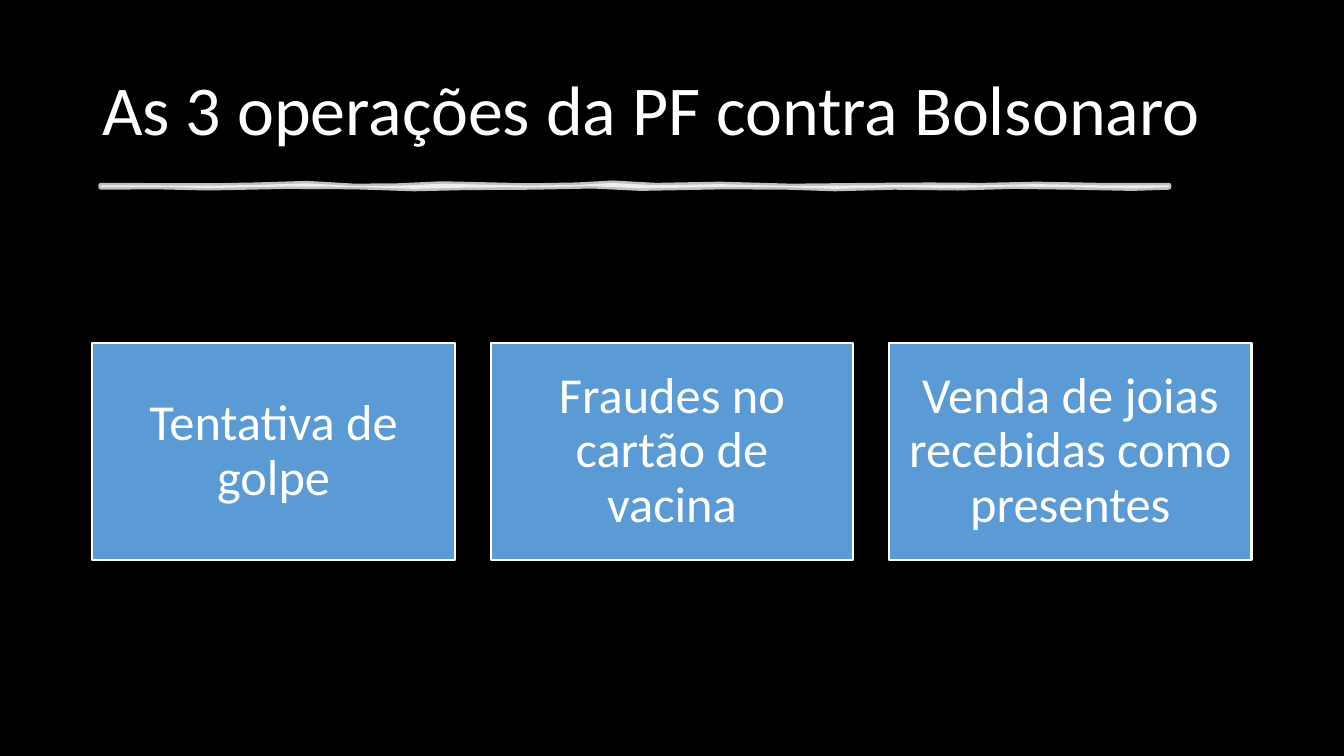
from dataclasses import dataclass

from lxml import etree
from pptx import Presentation
from pptx.dml.color import RGBColor
from pptx.enum.shapes import MSO_SHAPE
from pptx.enum.text import MSO_ANCHOR, PP_ALIGN
from pptx.oxml.ns import qn
from pptx.util import Cm, Pt

RECTANGLE = MSO_SHAPE.RECTANGLE
MIDDLE = MSO_ANCHOR.MIDDLE
LEFT, CENTER = PP_ALIGN.LEFT, PP_ALIGN.CENTER


@dataclass(frozen=True)
class Theme:
    """Colours, font and type sizes of the slide."""
    backdrop: RGBColor = RGBColor(0x00, 0x00, 0x00)
    light: RGBColor = RGBColor(0xFF, 0xFF, 0xFF)
    card: RGBColor = RGBColor(0x5B, 0x9B, 0xD5)
    font: str = "Calibri"
    title_size: int = 50
    card_size: int = 36
    card_border: float = 1.5
    brush_width: float = 3.5
    brush_opacity: int = 75


THEME = Theme()
SLIDE_WIDTH, SLIDE_HEIGHT = 33.87, 19.05
TITLE = "As 3 operações da PF contra Bolsonaro"
OPERATIONS = (
    "Tentativa de golpe",
    "Fraudes no cartão de vacina",
    "Venda de joias recebidas como presentes",
)
BRUSH_TOP = (
    (0, 0), (2.8, 0.01), (3.9, -0.01), (5.2, -0.05), (6.4, 0.02), (7.5, 0.01),
    (8.6, -0.04), (10.8, 0.01), (12, -0.01), (12.9, -0.06), (14, 0),
    (15.6, -0.03), (17.4, 0.02), (19.4, 0), (20.9, -0.01), (22.2, 0),
    (23.6, -0.03), (25.2, 0), (26.92, 0),
)
BRUSH_BOTTOM = (
    (26.92, 0.05), (26, 0.08), (24.5, 0.05), (23, 0.03), (21.6, 0.07),
    (20, 0.05), (18.5, 0.09), (17.3, 0.05), (15.7, 0.04), (13.6, 0.08),
    (12.4, 0.02), (10.9, 0.05), (9.2, 0.06), (7.9, 0.09), (6.4, 0.04),
    (4.7, 0.03), (2.7, 0.07), (1.4, 0.04), (0, 0.05),
)


def apply_format(target, values):
    """Set every named value on the target."""
    for name, value in values.items():
        setattr(target, name, value)


def write_text(shape, text, size, align, inset_x, inset_y):
    """Write one paragraph, vertically centred, into the shape."""
    frame = shape.text_frame
    apply_format(frame, {
        "word_wrap": True, "vertical_anchor": MIDDLE,
        "margin_left": Cm(inset_x), "margin_right": Cm(inset_x),
        "margin_top": Cm(inset_y), "margin_bottom": Cm(inset_y),
    })
    paragraph = frame.paragraphs[0]
    paragraph.text = text
    apply_format(paragraph, {"alignment": align, "line_spacing": 0.9})
    apply_format(paragraph.font, {"name": THEME.font, "size": Pt(size)})
    paragraph.font.color.rgb = THEME.light


def paint(shape, fill, border=None, border_width=0):
    """Fill and outline the shape without a shadow."""
    shape.shadow.inherit = False
    shape.fill.solid()
    shape.fill.fore_color.rgb = fill
    if border is None:
        shape.line.fill.background()
    else:
        shape.line.color.rgb = border
        shape.line.width = Pt(border_width)


def add_backdrop(slide, left, top, width, height):
    """Cover the box with the dark backdrop."""
    backdrop = slide.shapes.add_shape(
        RECTANGLE, Cm(left), Cm(top), Cm(width), Cm(height))
    paint(backdrop, THEME.backdrop)


def add_title(slide, left, top, width, height):
    """Place the title and the brush stroke along its lower edge."""
    title = slide.shapes.add_textbox(
        Cm(left), Cm(top), Cm(width), Cm(height))
    write_text(title, TITLE, THEME.title_size, LEFT, 0.25, 0.13)

    stroke_left, stroke_top = left + 0.21, top + height - 0.02
    start, *outline = [
        (Cm(stroke_left + x), Cm(stroke_top + y))
        for x, y in BRUSH_TOP + BRUSH_BOTTOM]
    builder = slide.shapes.build_freeform(*start)
    builder.add_line_segments(outline, close=True)
    stroke = builder.convert_to_shape()
    paint(stroke, THEME.light, THEME.light, THEME.brush_width)
    etree.SubElement(stroke.line.fill._xPr, qn("a:round"))
    for color in stroke.element.spPr.iter(qn("a:srgbClr")):
        alpha = etree.SubElement(color, qn("a:alpha"))
        alpha.set("val", str(THEME.brush_opacity * 1000))


def add_operations(slide, left, top, width, height, gap=0.91):
    """Share the box equally among the operation cards."""
    card_width = (width - gap * (len(OPERATIONS) - 1)) / len(OPERATIONS)
    for index, operation in enumerate(OPERATIONS):
        card = slide.shapes.add_shape(
            RECTANGLE, Cm(left + index * (card_width + gap)), Cm(top),
            Cm(card_width), Cm(height))
        paint(card, THEME.card, THEME.light, THEME.card_border)
        write_text(card, operation, THEME.card_size, CENTER, 0.38, 0.38)


def main():
    """Build the slide and save it."""
    deck = Presentation()
    deck.slide_width, deck.slide_height = Cm(SLIDE_WIDTH), Cm(SLIDE_HEIGHT)
    slide = deck.slides.add_slide(deck.slide_layouts[6])
    add_backdrop(slide, 0, 0, SLIDE_WIDTH, SLIDE_HEIGHT)
    add_title(slide, 2.33, 1.01, 29.21, 3.68)
    add_operations(slide, 2.33, 8.64, 29.21, 5.48)
    deck.save("out.pptx")


if __name__ == "__main__":
    main()
